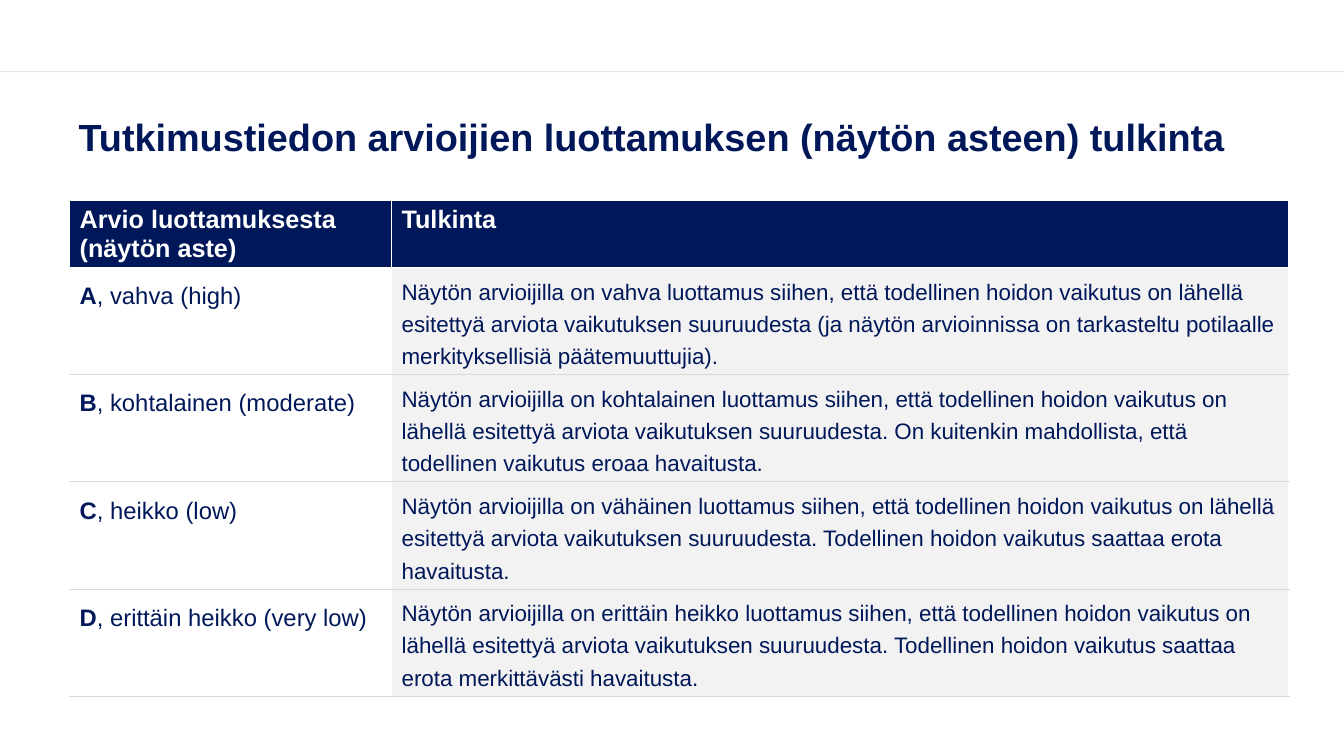
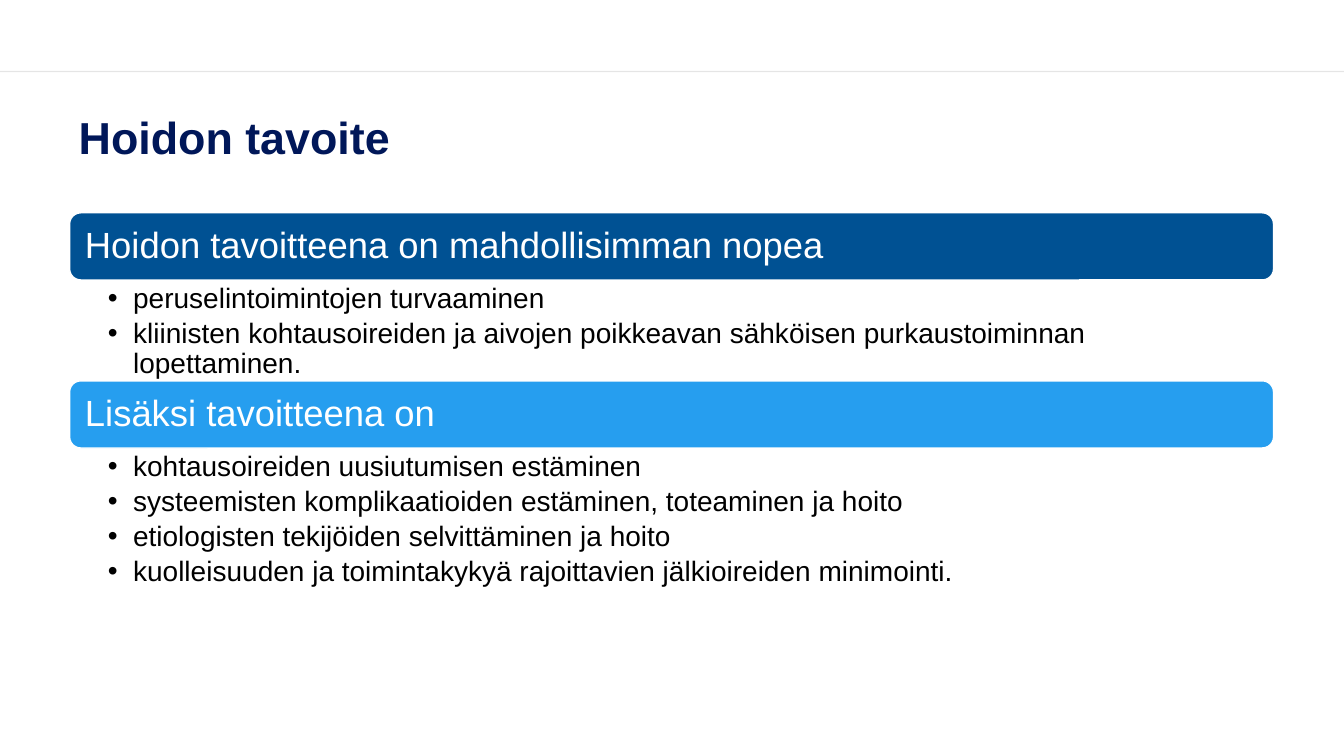
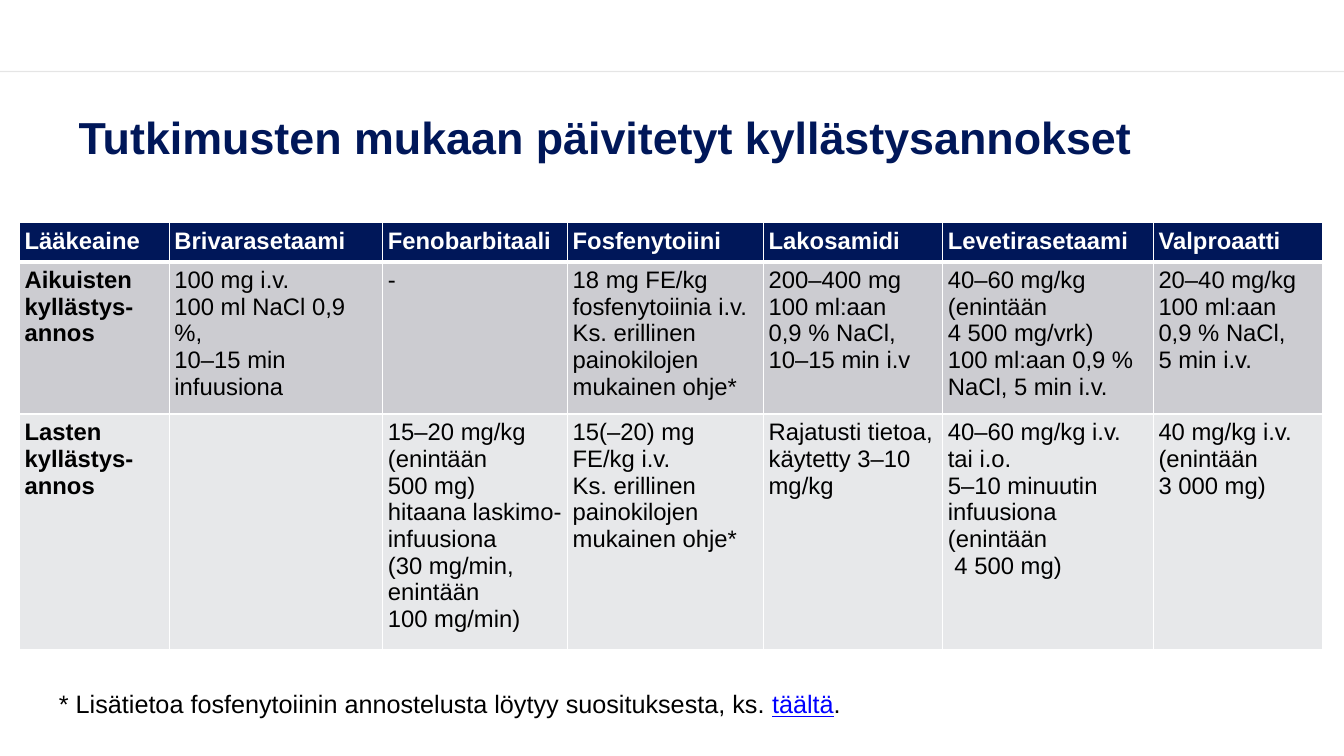
"""Build three slides on evidence grading, treatment goals and loading doses."""
from copy import deepcopy
from lxml import etree
from pptx import Presentation
from pptx import util as u
from pptx.dml.color import RGBColor
from pptx.enum import shapes, text
from pptx.oxml.ns import qn

NAVY, WHITE, BLACK, GREY = "001759", "FFFFFF", "000000", "D9D9D9"
FONT = "Arial"
rgb = RGBColor.from_string

presentation = Presentation()
presentation.slide_width = u.Inches(13.33)
presentation.slide_height = u.Inches(7.5)
column = presentation.slide_width / 96
row = presentation.slide_height / 54


def write(paragraph, content, size=17, color=BLACK, bold=False, underline=False, spacing=1.0, after=0):
    """Add formatted text to a paragraph, with a line break at each newline."""
    paragraph.alignment = text.PP_ALIGN.LEFT
    paragraph.line_spacing = spacing
    paragraph.space_before = u.Pt(0)
    paragraph.space_after = u.Pt(after)
    for index, line in enumerate(content.split("\n")):
        if index:
            paragraph.add_line_break()
        run = paragraph.add_run()
        run.text = line
        run.font.name = FONT
        run.font.size = u.Pt(size)
        run.font.bold = bold
        run.font.underline = underline
        run.font.color.rgb = rgb(color)
        if index:
            run._r.getprevious().append(deepcopy(run._r.rPr))


def dress(cell, fill, **borders):
    """Give a cell its fill and its borders, each as (colour, points)."""
    properties = cell._tc.get_or_add_tcPr()
    for side in "LRTB":
        if side in borders:
            color, width = borders[side]
            line = etree.SubElement(properties, qn("a:ln" + side), w=str(u.Pt(width)))
            solid = etree.SubElement(line, qn("a:solidFill"))
            etree.SubElement(solid, qn("a:srgbClr"), val=color)
    cell.fill.solid()
    cell.fill.fore_color.rgb = rgb(fill)


titles = [
    ("Tutkimustiedon arvioijien luottamuksen (näytön asteen) tulkinta", 27),
    ("Hoidon tavoite", 32),
    ("Tutkimusten mukaan päivitetyt kyllästysannokset", 32),
]
slides = []
for title_text, title_size in titles:
    slide = presentation.slides.add_slide(presentation.slide_layouts[5])
    rule_y = int(5.11 * row)
    rule = slide.shapes.add_connector(
        shapes.MSO_CONNECTOR.STRAIGHT, 0, rule_y, presentation.slide_width, rule_y)
    rule.line.width = u.Pt(1)
    rule.line.color.rgb = rgb(BLACK)
    rule_color = rule._element.find(".//" + qn("a:srgbClr"))
    etree.SubElement(rule_color, qn("a:alpha"), val="10000")
    etree.SubElement(rule._element.spPr, qn("a:effectLst"))
    title = slide.shapes.title
    title.left, title.top = int(4.9 * column), int(6.7 * row)
    title.width, title.height = int(86 * column), int(6.55 * row)
    title.text_frame.auto_size = text.MSO_AUTO_SIZE.NONE
    title.text_frame.vertical_anchor = text.MSO_ANCHOR.MIDDLE
    write(title.text_frame.paragraphs[0], title_text, size=title_size, color=NAVY, bold=True, spacing=0.9)
    slides.append(slide)
grading_slide, goal_slide, dose_slide = slides

grades = [
    ("A", ", vahva (high)",
     "Näytön arvioijilla on vahva luottamus siihen, että todellinen hoidon vaikutus on lähellä esitettyä "
     "arviota vaikutuksen suuruudesta (ja näytön arvioinnissa on tarkasteltu potilaalle merkityksellisiä "
     "päätemuuttujia)."),
    ("B", ", kohtalainen (moderate)",
     "Näytön arvioijilla on kohtalainen luottamus siihen, että todellinen hoidon vaikutus on lähellä "
     "esitettyä arviota vaikutuksen suuruudesta. On kuitenkin mahdollista, että todellinen vaikutus eroaa "
     "havaitusta."),
    ("C", ", heikko (low)",
     "Näytön arvioijilla on vähäinen luottamus siihen, että todellinen hoidon vaikutus on lähellä esitettyä "
     "arviota vaikutuksen suuruudesta. Todellinen hoidon vaikutus saattaa erota havaitusta."),
    ("D", ", erittäin heikko (very low)",
     "Näytön arvioijilla on erittäin heikko luottamus siihen, että todellinen hoidon vaikutus on lähellä "
     "esitettyä arviota vaikutuksen suuruudesta. Todellinen hoidon vaikutus saattaa erota merkittävästi "
     "havaitusta."),
]
grade_widths = [23, 64.1]
grade_heights = [4.75] + [7.5] * len(grades)
grade_table = grading_slide.shapes.add_table(
    len(grade_heights), len(grade_widths), int(4.97 * column), int(14.35 * row),
    int(sum(grade_widths) * column), int(sum(grade_heights) * row)).table
for index, width in enumerate(grade_widths):
    grade_table.columns[index].width = int(width * column)
for index, height in enumerate(grade_heights):
    grade_table.rows[index].height = int(height * row)
for index, heading in enumerate(["Arvio luottamuksesta \n(näytön aste)", "Tulkinta"]):
    cell = grade_table.cell(0, index)
    edge = (WHITE, 1)
    dress(cell, NAVY, L=edge, R=edge, T=edge)
    write(cell.text_frame.paragraphs[0], heading, size=18, color=WHITE, bold=True)
for index, (letter, name, meaning) in enumerate(grades, 1):
    grade_cell, meaning_cell = grade_table.cell(index, 0), grade_table.cell(index, 1)
    lines = {"B": (GREY, 0.5)}
    if index > 1:
        lines["T"] = (GREY, 0.5)
    dress(grade_cell, WHITE, **lines)
    dress(meaning_cell, "F2F2F2", **lines)
    write(grade_cell.text_frame.paragraphs[0], letter, color=NAVY, bold=True, spacing=1.4)
    write(grade_cell.text_frame.paragraphs[0], name, color=NAVY, spacing=1.4)
    write(meaning_cell.text_frame.paragraphs[0], meaning, size=16, color=NAVY, spacing=1.3)

goals = [
    ("Hoidon tavoitteena on mahdollisimman nopea", "005193", 7.2, [
        "peruselintoimintojen turvaaminen",
        "kliinisten kohtausoireiden ja aivojen poikkeavan sähköisen purkaustoiminnan lopettaminen."]),
    ("Lisäksi tavoitteena on", "269EEF", 10.4, [
        "kohtausoireiden uusiutumisen estäminen",
        "systeemisten komplikaatioiden estäminen, toteaminen ja hoito",
        "etiologisten tekijöiden selvittäminen ja hoito",
        "kuolleisuuden ja toimintakykyä rajoittavien jälkioireiden minimointi."]),
]
goal_left, goal_width, goal_top, band_height = int(4.97 * column), int(86 * column), 15.2, 4.8
for heading, color, list_height, items in goals:
    band = goal_slide.shapes.add_shape(
        shapes.MSO_SHAPE.ROUNDED_RECTANGLE, goal_left, int(goal_top * row), goal_width, int(band_height * row))
    band.shadow.inherit = False
    band.fill.solid()
    band.fill.fore_color.rgb = rgb(color)
    band.line.color.rgb = rgb(WHITE)
    band.line.width = u.Pt(1)
    band.text_frame.margin_left = u.Inches(0.12)
    band.text_frame.vertical_anchor = text.MSO_ANCHOR.MIDDLE
    write(band.text_frame.paragraphs[0], heading, size=26, color=WHITE, spacing=0.9)
    goal_top += band_height
    goal_list = goal_slide.shapes.add_textbox(
        goal_left, int(goal_top * row), goal_width, int(list_height * row))
    frame = goal_list.text_frame
    frame.word_wrap = True
    frame.margin_left, frame.margin_right = u.Inches(0.38), u.Inches(0.2)
    frame.margin_top = frame.margin_bottom = u.Inches(0.04)
    for index, item in enumerate(items):
        paragraph = frame.add_paragraph() if index else frame.paragraphs[0]
        properties = paragraph._p.get_or_add_pPr()
        properties.set("marL", str(u.Inches(0.25)))
        properties.set("indent", str(-u.Inches(0.25)))
        etree.SubElement(properties, qn("a:buFont"), typeface=FONT)
        etree.SubElement(properties, qn("a:buChar"), char="•")
        write(paragraph, item, size=20, spacing=0.9, after=3.4)
    goal_top += list_height

doses = [
    ["Lääkeaine", "Brivarasetaami", "Fenobarbitaali", "Fosfenytoiini", "Lakosamidi", "Levetirasetaami",
     "Valproaatti"],
    ["Aikuisten kyllästys-annos",
     "100 mg i.v.\n100 ml NaCl 0,9 %,\n10–15 min infuusiona",
     "-",
     "18 mg FE/kg fosfenytoiinia i.v.\nKs. erillinen painokilojen mukainen ohje*",
     "200–400 mg\n100 ml:aan \n0,9 % NaCl,\n10–15 min i.v",
     "40–60 mg/kg (enintään \n4 500 mg/vrk)\n100 ml:aan 0,9 % NaCl, 5 min i.v.",
     "20–40 mg/kg\n100 ml:aan \n0,9 % NaCl,\n5 min i.v."],
    ["Lasten kyllästys-annos",
     "",
     "15–20 mg/kg (enintään \n500 mg)\nhitaana laskimo-infuusiona \n(30 mg/min, enintään \n100 mg/min)",
     "15(–20) mg \nFE/kg i.v.\nKs. erillinen painokilojen mukainen ohje*",
     "Rajatusti tietoa, käytetty 3–10 mg/kg",
     "40–60 mg/kg i.v. \ntai i.o.\n5–10 minuutin infuusiona (enintään\n 4 500 mg)",
     "40 mg/kg i.v.\n(enintään\n3 000 mg)"],
]
dose_widths = [10.7, 15.25, 13.2, 14, 12.8, 15.05, 12.1]
dose_heights = [2.8, 10.87, 16.85]
dose_fills = [NAVY, "CCCCD1", "E7E8EA"]
dose_table = dose_slide.shapes.add_table(
    len(doses), len(dose_widths), int(1.4 * column), int(15.9 * row),
    int(sum(dose_widths) * column), int(sum(dose_heights) * row)).table
for index, width in enumerate(dose_widths):
    dose_table.columns[index].width = int(width * column)
for row_index, dose_row in enumerate(doses):
    dose_table.rows[row_index].height = int(dose_heights[row_index] * row)
    is_header = row_index == 0
    for column_index, dose in enumerate(dose_row):
        cell = dose_table.cell(row_index, column_index)
        cell.margin_left = cell.margin_right = cell.margin_top = cell.margin_bottom = u.Inches(0.05)
        edge = (WHITE, 1)
        top = (WHITE, 3 if row_index == 1 else 1)
        bottom = (WHITE, 3 if is_header else 1)
        dress(cell, dose_fills[row_index], L=edge, R=edge, T=top, B=bottom)
        write(cell.text_frame.paragraphs[0], dose, color=WHITE if is_header else BLACK,
              bold=is_header or column_index == 0)

footnote = dose_slide.shapes.add_textbox(
    int(3.5 * column), int(48.8 * row), int(65 * column), int(2.9 * row))
footnote.text_frame.word_wrap = True
note = footnote.text_frame.paragraphs[0]
write(note, "* Lisätietoa fosfenytoiinin annostelusta löytyy suosituksesta, ks. ", size=18)
write(note, "täältä", size=18, color="0000FF", underline=True)
write(note, ".", size=18)

presentation.save("out.pptx")
